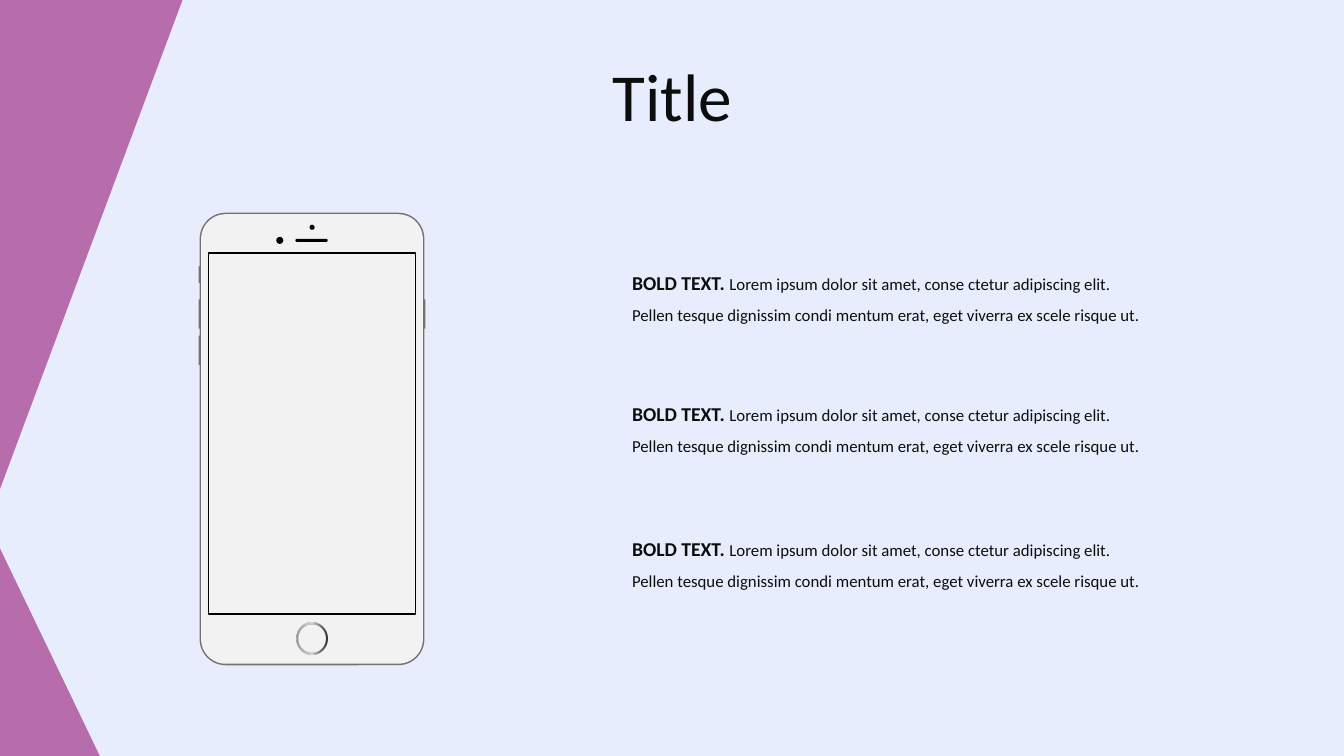
from lxml import etree
from pptx import Presentation
from pptx.dml.color import RGBColor
from pptx.enum import shapes, text
from pptx.oxml import parse_xml
from pptx.oxml.ns import nsdecls, qn
from pptx.util import Inches, Pt

TITLE = "Title"
LEAD = "BOLD TEXT. "
BODY = ("Lorem ipsum dolor sit amet, conse ctetur adipiscing elit. "
        "Pellen tesque dignissim condi mentum erat, eget viverra ex scele risque ut.")
ITEM_TOPS = [2.52, 3.82, 5.16]

THEME = {
    "font": "Calibri", "ink": "0D0D0D", "bg": "E7EDFD", "accent": "B76CAB",
    "edge": "767171", "face": "F2F2F2", "black": "000000",
    "title": 48, "lead": 14, "body": 12,
    "ring": [(0, "979797", 100), (50, "D7D7D7", 100), (100, "000000", 80)],
}

PHONE = (1.98, 2.11, 2.23, 4.49)
CORNER = 0.26
RIM = 0.015
BUTTON_W = 0.04
LEFT_BUTTONS = [(2.64, 0.17), (2.97, 0.29), (3.33, 0.29)]
RIGHT_BUTTONS = [(2.97, 0.29)]
SCREEN = (2.07, 2.51, 2.05, 3.58)
CAMERA = (2.74, 2.35, 0.07, 0.07)
SENSOR = (3.07, 2.23, 0.05, 0.05)
SPEAKER = (2.93, 2.37, 0.32, 0.03)
HOME = (2.94, 6.18, 0.31, 0.31)
RING_W = 0.02

KIND = shapes.MSO_SHAPE
prs = Presentation()
prs.slide_width, prs.slide_height = Inches(13.33), Inches(7.5)
s = prs.slides.add_slide(prs.slide_layouts[6])
s.background.fill.solid()
s.background.fill.fore_color.rgb = RGBColor.from_string(THEME["bg"])


def add_shape(kind, box, fill=None, adj=None):
    sp = s.shapes.add_shape(kind, *map(Inches, box))
    sp.shadow.inherit = False
    sp.line.fill.background()
    if fill:
        sp.fill.solid()
        sp.fill.fore_color.rgb = RGBColor.from_string(THEME[fill])
    else:
        sp.fill.background()
    if adj is not None:
        sp.adjustments[0] = adj
    return sp


def add_text(box, runs, align=None, spacing=None):
    tf = s.shapes.add_textbox(*map(Inches, box)).text_frame
    tf.word_wrap = True
    tf.auto_size = text.MSO_AUTO_SIZE.SHAPE_TO_FIT_TEXT
    p = tf.paragraphs[0]
    p.alignment = align
    p.line_spacing = spacing
    for words, size, bold in runs:
        r = p.add_run()
        r.text = words
        r.font.name, r.font.size, r.font.bold = THEME["font"], Pt(THEME[size]), bold
        r.font.color.rgb = RGBColor.from_string(THEME["ink"])


def set_gradient(sp, stops):
    grad = parse_xml(f'<a:gradFill {nsdecls("a")} rotWithShape="1"><a:gsLst/>'
                     '<a:lin ang="0" scaled="0"/></a:gradFill>')
    for pos, color, alpha in stops:
        gs = etree.SubElement(grad[0], qn("a:gs"), pos=str(pos * 1000))
        clr = etree.SubElement(gs, qn("a:srgbClr"), val=color)
        if alpha < 100:
            etree.SubElement(clr, qn("a:alpha"), val=str(alpha * 1000))
    spPr = sp._element.spPr
    spPr.replace(spPr.find(qn("a:noFill")), grad)


add_shape(KIND.RIGHT_TRIANGLE, (0, 5.44, 1, 2.08), "accent")
top = add_shape(KIND.RIGHT_TRIANGLE, (0, 0, 1.81, 4.85), "accent")
top.rotation = 180
top._element.spPr.find(qn("a:xfrm")).set("flipH", "1")

x, y, w, h = PHONE
for edge_x, buttons in [(x - 0.01, LEFT_BUTTONS), (x + w + 0.01 - BUTTON_W, RIGHT_BUTTONS)]:
    for button_y, button_h in buttons:
        add_shape(KIND.ROUNDED_RECTANGLE, (edge_x, button_y, BUTTON_W, button_h), "edge", 0.2)
for inset, fill in [(0, "edge"), (RIM, "face")]:
    add_shape(KIND.ROUNDED_RECTANGLE, (x + inset, y + inset, w - 2 * inset, h - 2 * inset),
              fill, (CORNER - inset) / (w - 2 * inset))
for dot in (CAMERA, SENSOR):
    add_shape(KIND.OVAL, dot, "black")
add_shape(KIND.ROUNDED_RECTANGLE, SPEAKER, "black", 0.5)
set_gradient(add_shape(KIND.DONUT, HOME, adj=RING_W / HOME[2]), THEME["ring"])
screen = add_shape(KIND.RECTANGLE, SCREEN)
screen.line.color.rgb = RGBColor.from_string(THEME["black"])
screen.line.width = Pt(1)

add_text((3.06, 0.49, 7.22, 0.91), [(TITLE, "title", False)], text.PP_ALIGN.CENTER)
for item_y in ITEM_TOPS:
    add_text((6.17, item_y, 5.38, 0.73),
             [(LEAD, "lead", True), (BODY, "body", False)], spacing=1.5)

prs.save("out.pptx")
